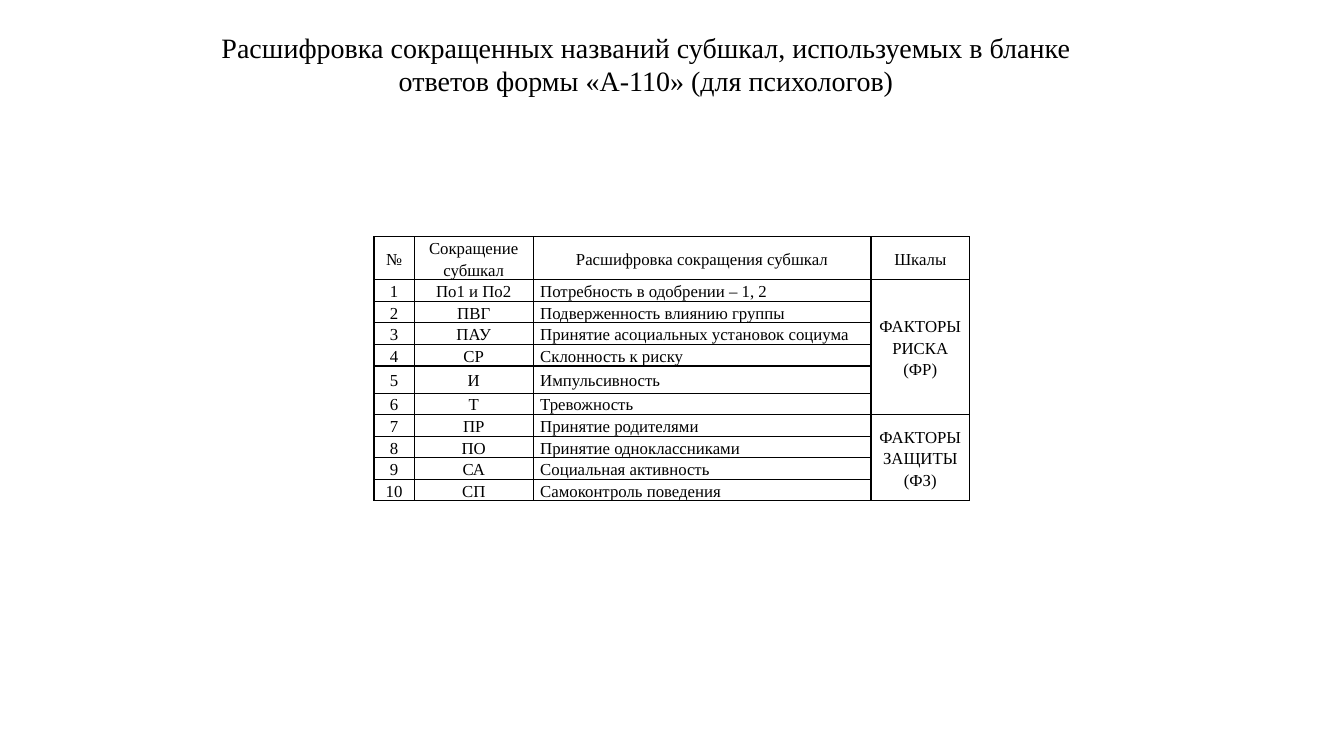
from lxml import etree
from pptx import Presentation
from pptx.dml.color import RGBColor
from pptx.enum.text import MSO_ANCHOR, MSO_AUTO_SIZE, PP_ALIGN
from pptx.oxml.ns import qn
from pptx.util import Pt

LEFT, CENTER = PP_ALIGN.LEFT, PP_ALIGN.CENTER
TOP, MIDDLE = MSO_ANCHOR.TOP, MSO_ANCHOR.MIDDLE
NO_AUTOFIT = MSO_AUTO_SIZE.NONE

COLORS = {"text": "000000", "border": "000000"}
FONT = "Times New Roman"

HEADER = ["№", "Сокращение субшкал", "Расшифровка сокращения субшкал", "Шкалы"]
SUBSCALES = [
    ("По1 и По2", "Потребность в одобрении – 1, 2"),
    ("ПВГ", "Подверженность влиянию группы"),
    ("ПАУ", "Принятие асоциальных установок социума"),
    ("СР", "Склонность к риску"),
    ("И", "Импульсивность"),
    ("Т", "Тревожность"),
    ("ПР", "Принятие родителями"),
    ("ПО", "Принятие одноклассниками"),
    ("СА", "Социальная активность"),
    ("СП", "Самоконтроль поведения"),
]
# First row of each scale: (last row, label)
SCALES = {1: (6, "ФАКТОРЫ РИСКА\n(ФР)"), 7: (10, "ФАКТОРЫ ЗАЩИТЫ\n(ФЗ)")}
COLUMN_WIDTHS = [28.8, 85, 241.2, 70.6]
HEADER_HEIGHT, ROW_HEIGHT, TALL_ROW_HEIGHT = 30.6, 15.4, 19.4
TALL_ROW = 5


def write_text(frame, text, size=12, align=CENTER, spacing=1.0):
    """Fill a text frame, one paragraph per line of text."""
    for index, line in enumerate(text.split("\n")):
        para = frame.add_paragraph() if index else frame.paragraphs[0]
        para.alignment = align
        para.line_spacing = spacing
        span = para.add_run()
        span.text = line
        span.font.name = FONT
        span.font.size = Pt(size)
        span.font.color.rgb = RGBColor.from_string(COLORS["text"])


def add_borders(cell, width=1):
    properties = cell._tc.get_or_add_tcPr()
    for side in ("a:lnL", "a:lnR", "a:lnT", "a:lnB"):
        line = etree.SubElement(properties, qn(side), w=str(Pt(width)))
        fill = etree.SubElement(line, qn("a:solidFill"))
        etree.SubElement(fill, qn("a:srgbClr"), val=COLORS["border"])


deck = Presentation()
deck.slide_width, deck.slide_height = Pt(960), Pt(540)
page = deck.slides.add_slide(deck.slide_layouts[5])

title = page.shapes.title
title.left, title.top, title.width, title.height = Pt(141), Pt(18), Pt(641), Pt(76)
title.text_frame.word_wrap = True
title.text_frame.auto_size = NO_AUTOFIT
title.text_frame.vertical_anchor = TOP
write_text(
    title.text_frame,
    "Расшифровка сокращенных названий субшкал, используемых в бланке "
    "ответов формы «А-110» (для психологов)",
    size=20,
)

rows = [HEADER]
for number, (short_name, full_name) in enumerate(SUBSCALES, start=1):
    scale = SCALES[number][1] if number in SCALES else ""
    rows.append([str(number), short_name, full_name, scale])

heights = [HEADER_HEIGHT] + [ROW_HEIGHT] * len(SUBSCALES)
heights[TALL_ROW] = TALL_ROW_HEIGHT

table = page.shapes.add_table(
    len(rows), len(HEADER), Pt(267.1), Pt(169.2),
    Pt(sum(COLUMN_WIDTHS)), Pt(sum(heights)),
).table
table.first_row = False
table.horz_banding = False
for column, width in zip(table.columns, COLUMN_WIDTHS):
    column.width = Pt(width)
for row, height in zip(table.rows, heights):
    row.height = Pt(height)

for row_index, values in enumerate(rows):
    for column_index, value in enumerate(values):
        cell = table.cell(row_index, column_index)
        cell.margin_left = cell.margin_right = Pt(5)
        cell.margin_top = cell.margin_bottom = Pt(0)
        cell.vertical_anchor = MIDDLE
        add_borders(cell)
        cell.fill.background()
        is_description = row_index > 0 and column_index == 2
        write_text(cell.text_frame, value, spacing=1.15,
                   align=LEFT if is_description else CENTER)

for first, (last, label) in SCALES.items():
    table.cell(first, 3).merge(table.cell(last, 3))

deck.save("out.pptx")
